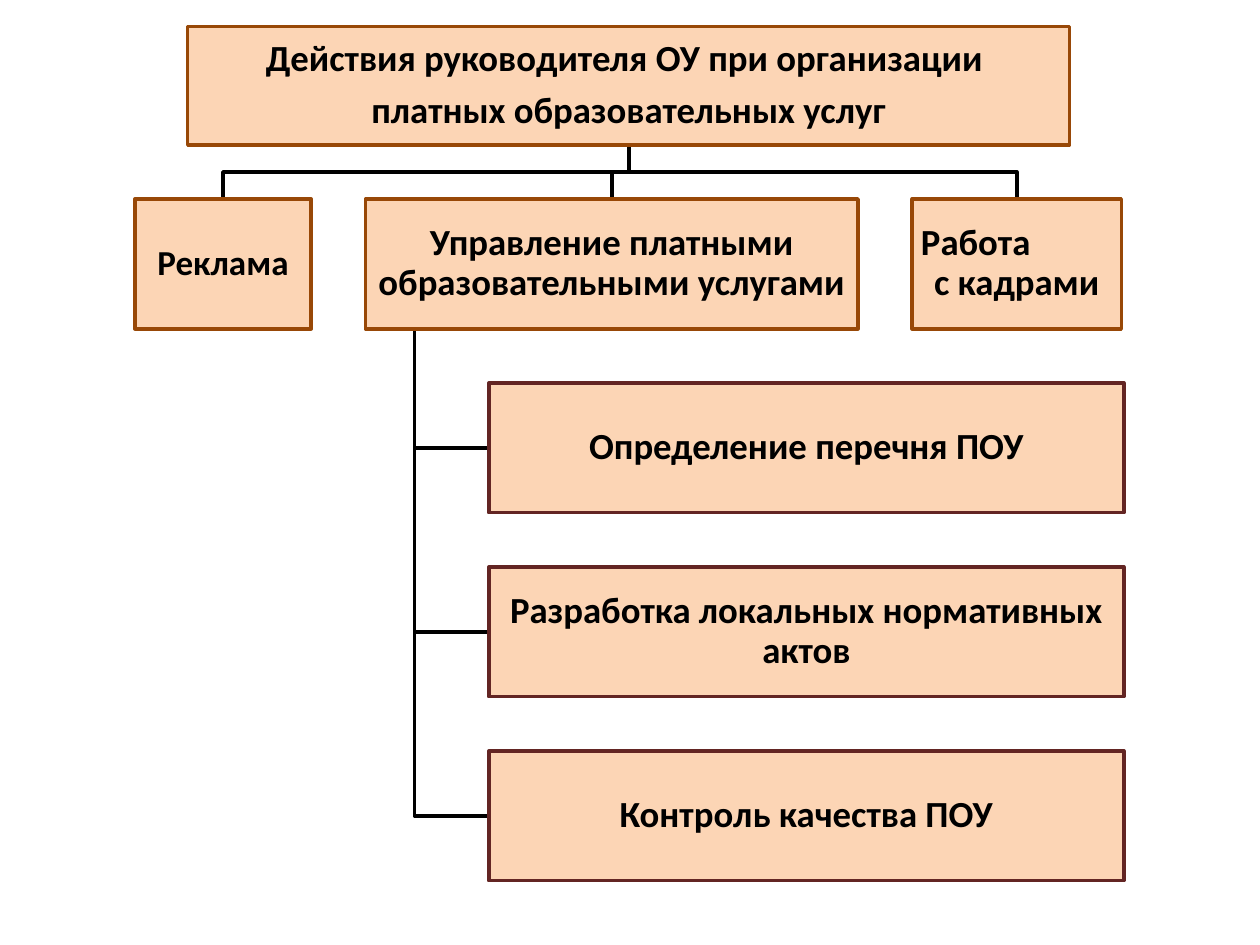
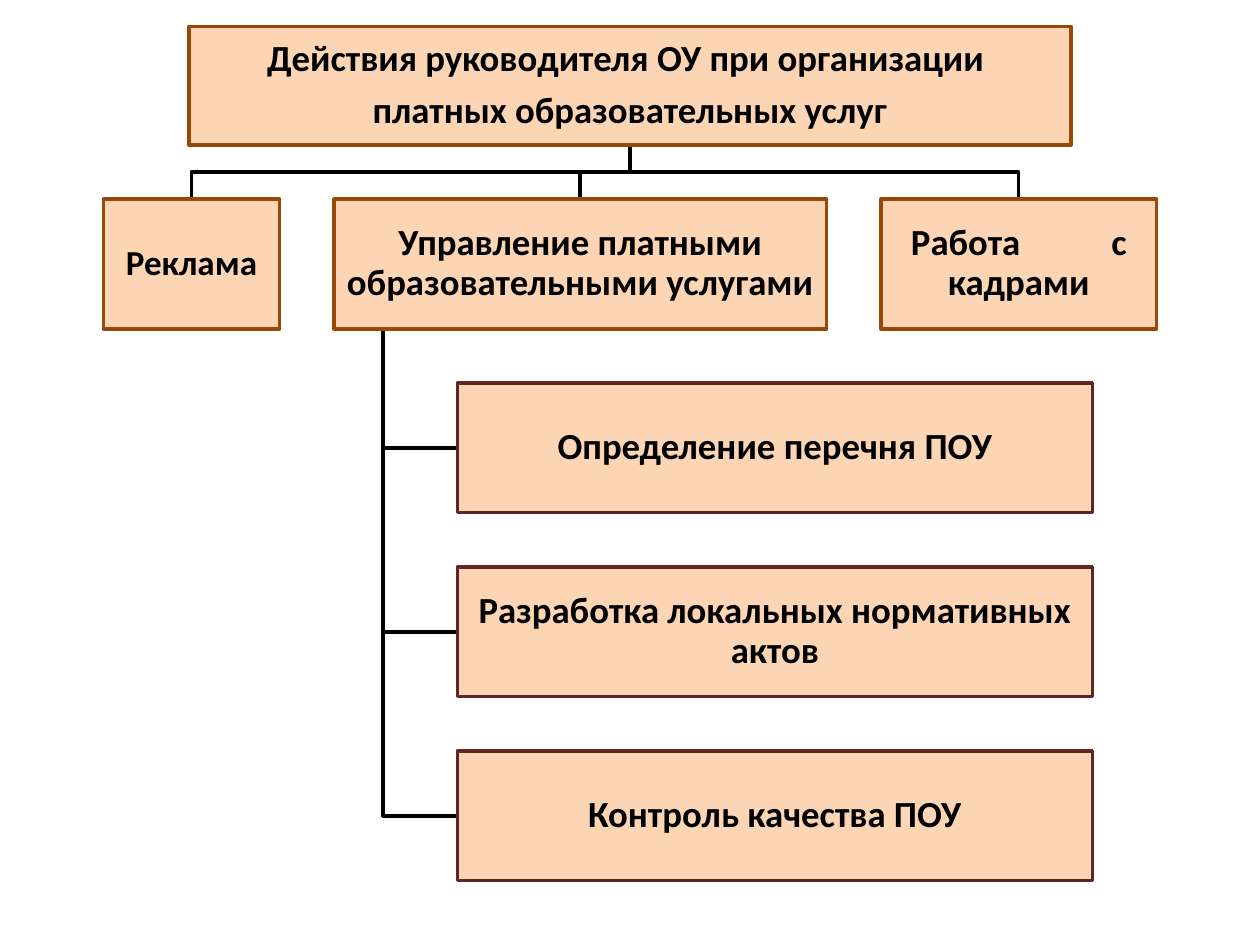
"""Two organisation charts on running paid educational services."""
import pptx
import pptx.util
import pptx.dml.color
import pptx.enum.shapes
import pptx.enum.text
from lxml import etree

Inches, Pt = pptx.util.Inches, pptx.util.Pt
RGB = pptx.dml.color.RGBColor.from_string
ALIGN = pptx.enum.text.PP_ALIGN

THEME = {
    "fill": "FCD5B5",
    "main_line": "984807",
    "task_line": "632523",
    "ink": "000000",
    "line_width": 2,
    "text_size": 21,
    "small_size": 20,
    "font": "Calibri",
}
GAP = 0.43
TITLE_TOP, TITLE_W, TITLE_H = 0.21, 7, 0.94
BOX_H, TASK_W = 1.03, 5.04
TRUNK_INSET, TASK_INDENT = 0.39, 0.59

TITLE = ["Действия руководителя ОУ при организации ", "платных образовательных услуг"]
MANAGEMENT = ["Управление платными образовательными услугами"]
TASKS = ["Определение перечня ПОУ", "Разработка локальных нормативных актов", "Контроль качества ПОУ"]
CHARTS = [
    {"title_left": 1.49, "row_left": 1.07, "staff_w": 1.66,
     "staff": ["\tРабота", "с кадрами"], "tabs": [0.06]},
    {"title_left": 1.5, "row_left": 0.82, "staff_w": 2.19,
     "staff": ["\tРабота\tс", "кадрами"], "tabs": [0.23, 1.82]},
]


def add_box(s, left, top, width, height, lines, line="main_line", size="text_size", gap=0, tabs=()):
    sp = s.shapes.add_shape(pptx.enum.shapes.MSO_SHAPE.RECTANGLE,
                            Inches(left), Inches(top), Inches(width), Inches(height))
    sp.shadow.inherit = False
    sp.fill.solid()
    sp.fill.fore_color.rgb = RGB(THEME["fill"])
    sp.line.color.rgb = RGB(THEME[line])
    sp.line.width = Pt(THEME["line_width"])
    tf = sp.text_frame
    frame = {"word_wrap": True, "vertical_anchor": pptx.enum.text.MSO_ANCHOR.MIDDLE}
    frame.update({f"margin_{side}": Inches(0.01) for side in ("left", "top", "right", "bottom")})
    for name, value in frame.items():
        setattr(tf, name, value)
    for i, text in enumerate(lines):
        p = tf.add_paragraph() if i else tf.paragraphs[0]
        tabbed = text.startswith("\t")
        style = {"alignment": ALIGN.LEFT if tabbed else ALIGN.CENTER,
                 "line_spacing": 0.9, "space_after": Pt(gap)}
        for name, value in style.items():
            setattr(p, name, value)
        if tabbed:
            ns = "{http://schemas.openxmlformats.org/drawingml/2006/main}"
            tab_list = etree.SubElement(p._p.get_or_add_pPr(), ns + "tabLst")
            for pos in tabs:
                etree.SubElement(tab_list, ns + "tab", pos=str(Inches(pos)), algn="l")
        r = p.add_run()
        r.text = text
        for name, value in {"name": THEME["font"], "size": Pt(THEME[size]), "bold": True}.items():
            setattr(r.font, name, value)
        r.font.color.rgb = RGB(THEME["ink"])


def add_branch(s, points):
    start, *rest = [(Inches(x), Inches(y)) for x, y in points]
    builder = s.shapes.build_freeform(*start)
    builder.add_line_segments(rest, close=False)
    sp = builder.convert_to_shape()
    sp.shadow.inherit = False
    sp.fill.background()
    sp.line.color.rgb = RGB(THEME["ink"])
    sp.line.width = Pt(THEME["line_width"])


prs = pptx.Presentation()
prs.slide_width, prs.slide_height = Inches(10), Inches(7.5)

for chart in CHARTS:
    s = prs.slides.add_slide(prs.slide_layouts[6])
    title_mid = chart["title_left"] + TITLE_W / 2
    title_bottom = TITLE_TOP + TITLE_H
    bus_y = title_bottom + GAP / 2
    row_top = title_bottom + GAP
    row_bottom = row_top + BOX_H

    row = []
    left = chart["row_left"]
    for width, lines, size in [(1.4, ["Реклама"], "small_size"),
                               (3.91, MANAGEMENT, "text_size"),
                               (chart["staff_w"], chart["staff"], "text_size")]:
        row.append((left, width, lines, size))
        left += width + GAP
    trunk_x = row[1][0] + TRUNK_INSET
    task_left = trunk_x + TASK_INDENT
    task_tops = [row_top + (i + 1) * (BOX_H + GAP) for i in range(len(TASKS))]

    for left, width, lines, size in row:
        mid = left + width / 2
        add_branch(s, [(title_mid, title_bottom), (title_mid, bus_y), (mid, bus_y), (mid, row_top)])
    for top in task_tops:
        mid = top + BOX_H / 2
        add_branch(s, [(trunk_x, row_bottom), (trunk_x, mid), (task_left, mid)])

    add_box(s, chart["title_left"], TITLE_TOP, TITLE_W, TITLE_H, TITLE, gap=7.35)
    for left, width, lines, size in row:
        add_box(s, left, row_top, width, BOX_H, lines, size=size, tabs=chart["tabs"])
    for top, task in zip(task_tops, TASKS):
        add_box(s, task_left, top, TASK_W, BOX_H, [task], line="task_line")

prs.save("out.pptx")
